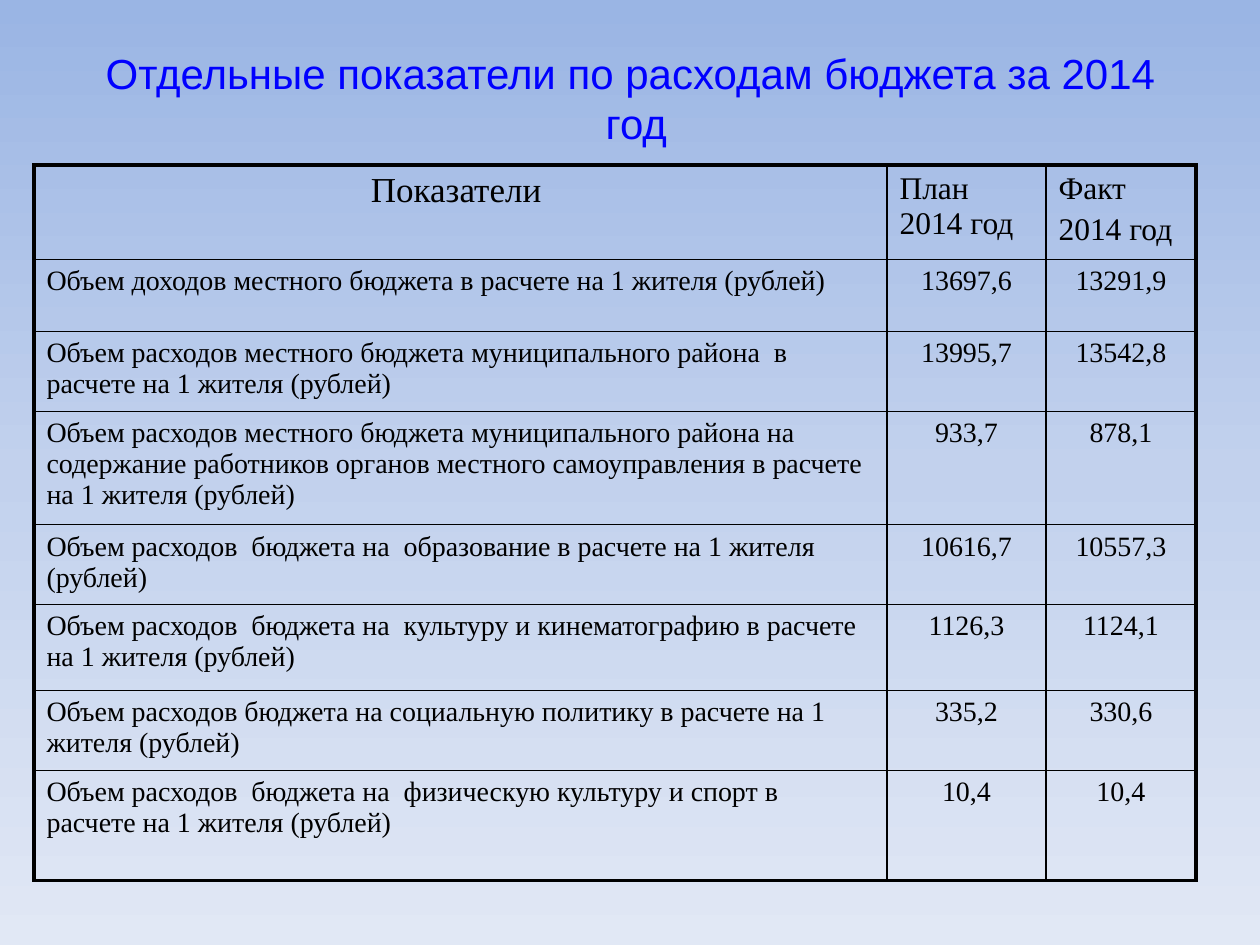
import dataclasses

import lxml.etree
import pptx
import pptx.dml.color
import pptx.enum.text
import pptx.oxml.ns
import pptx.util

PX = 914400 // 126
COLORS = {"title": "0000FF", "ink": "000000",
          "sky_top": "9AB5E4", "sky_middle": "C2D1ED", "sky_bottom": "E1E8F5"}
THIN, THICK = 1, 2.25
LEFT = pptx.enum.text.PP_ALIGN.LEFT
CENTER = pptx.enum.text.PP_ALIGN.CENTER
qn = pptx.oxml.ns.qn


@dataclasses.dataclass
class Row:
    height: int
    texts: tuple[str, str, str]
    sizes: tuple[int, int, int] = (16, 16, 16)
    aligns: tuple = (LEFT, CENTER, CENTER)


COLUMNS = (853, 159, 150)
ROWS = (
    Row(79, ("Показатели ", "План 2014 год", "Факт\n2014 год"),
        (20, 18, 18), (CENTER, LEFT, LEFT)),
    Row(72, ("Объем доходов местного бюджета в расчете на 1 жителя (рублей)",
             "13697,6", "13291,9")),
    Row(72, ("Объем расходов местного бюджета муниципального района  в расчете "
             "на 1 жителя (рублей)", "13995,7", "13542,8")),
    Row(110, ("Объем расходов местного бюджета муниципального района на содержание "
              "работников органов местного самоуправления в расчете на 1 жителя (рублей)",
              "933,7", "878,1")),
    Row(76, ("Объем расходов  бюджета на  образование в расчете на 1 жителя (рублей)",
             "10616,7", "10557,3")),
    Row(86, ("Объем расходов  бюджета на  культуру и кинематографию в расчете "
             "на 1 жителя (рублей)", "1126,3", "1124,1")),
    Row(79, ("Объем расходов бюджета на социальную политику в расчете "
             "на 1 жителя (рублей)", "335,2", "330,6")),
    Row(110, ("Объем расходов  бюджета на  физическую культуру и спорт в расчете "
              "на 1 жителя (рублей)", "10,4", "10,4")),
)


def px(*lengths: int) -> list[int]:
    return [n * PX for n in lengths]


def set_font(p, name: str, size: int, color: str) -> None:
    values = {"name": name, "size": pptx.util.Pt(size), "bold": False}
    for r in p.runs:
        for key, value in values.items():
            setattr(r.font, key, value)
        r.font.color.rgb = pptx.dml.color.RGBColor.from_string(COLORS[color])


def paint_background(s) -> None:
    fill = s.background.fill
    fill.gradient()
    fill.gradient_angle = 270
    stops = s.element.find(".//" + qn("a:gsLst"))
    stops.clear()
    for pos, color in ((0, "sky_top"), (50, "sky_middle"), (100, "sky_bottom")):
        stop = lxml.etree.SubElement(stops, qn("a:gs"), pos=str(pos * 1000))
        lxml.etree.SubElement(stop, qn("a:srgbClr"), val=COLORS[color])


def add_title(s, text: str) -> None:
    tf = s.shapes.add_textbox(*px(64, 0, 1133, 195)).text_frame
    values = {"word_wrap": True, "vertical_anchor": pptx.enum.text.MSO_ANCHOR.MIDDLE}
    for key, value in values.items():
        setattr(tf, key, value)
    p = tf.paragraphs[0]
    p.text = text
    p.alignment = CENTER
    set_font(p, "Arial", 24, "title")


def set_borders(cell, widths: dict[str, float]) -> None:
    tc_pr = cell._tc.get_or_add_tcPr()
    for side, width in widths.items():
        ln = lxml.etree.SubElement(tc_pr, qn("a:ln" + side), w=str(pptx.util.Pt(width)))
        fill = lxml.etree.SubElement(ln, qn("a:solidFill"))
        lxml.etree.SubElement(fill, qn("a:srgbClr"), val=COLORS["ink"])


def fill_cell(cell, text: str, size: int, align) -> None:
    cell.text = text
    for p in cell.text_frame.paragraphs:
        p.alignment = align
        space = lxml.etree.SubElement(p._p.get_or_add_pPr(), qn("a:spcBef"))
        lxml.etree.SubElement(space, qn("a:spcPct"), val="20000")
        set_font(p, "Times New Roman", size, "ink")


def add_indicators(s) -> None:
    height = sum(row.height for row in ROWS)
    table = s.shapes.add_table(len(ROWS), len(COLUMNS),
                               *px(34, 165, sum(COLUMNS), height)).table
    for key in ("first_row", "horz_banding"):
        setattr(table, key, False)
    for column, width in zip(table.columns, COLUMNS):
        column.width = width * PX
    last_row, last_column = len(ROWS) - 1, len(COLUMNS) - 1
    for i, row in enumerate(ROWS):
        table.rows[i].height = row.height * PX
        for j, content in enumerate(zip(row.texts, row.sizes, row.aligns)):
            cell = table.cell(i, j)
            fill_cell(cell, *content)
            outer = {"L": j == 0, "R": j == last_column, "T": i == 0, "B": i == last_row}
            set_borders(cell, {side: THICK if edge else THIN for side, edge in outer.items()})
            cell.fill.background()


def main() -> None:
    prs = pptx.Presentation()
    prs.slide_width, prs.slide_height = px(1260, 945)
    s = prs.slides.add_slide(prs.slide_layouts[6])
    paint_background(s)
    add_title(s, "Отдельные показатели по расходам бюджета за 2014\v год")
    add_indicators(s)
    prs.save("out.pptx")


if __name__ == "__main__":
    main()
